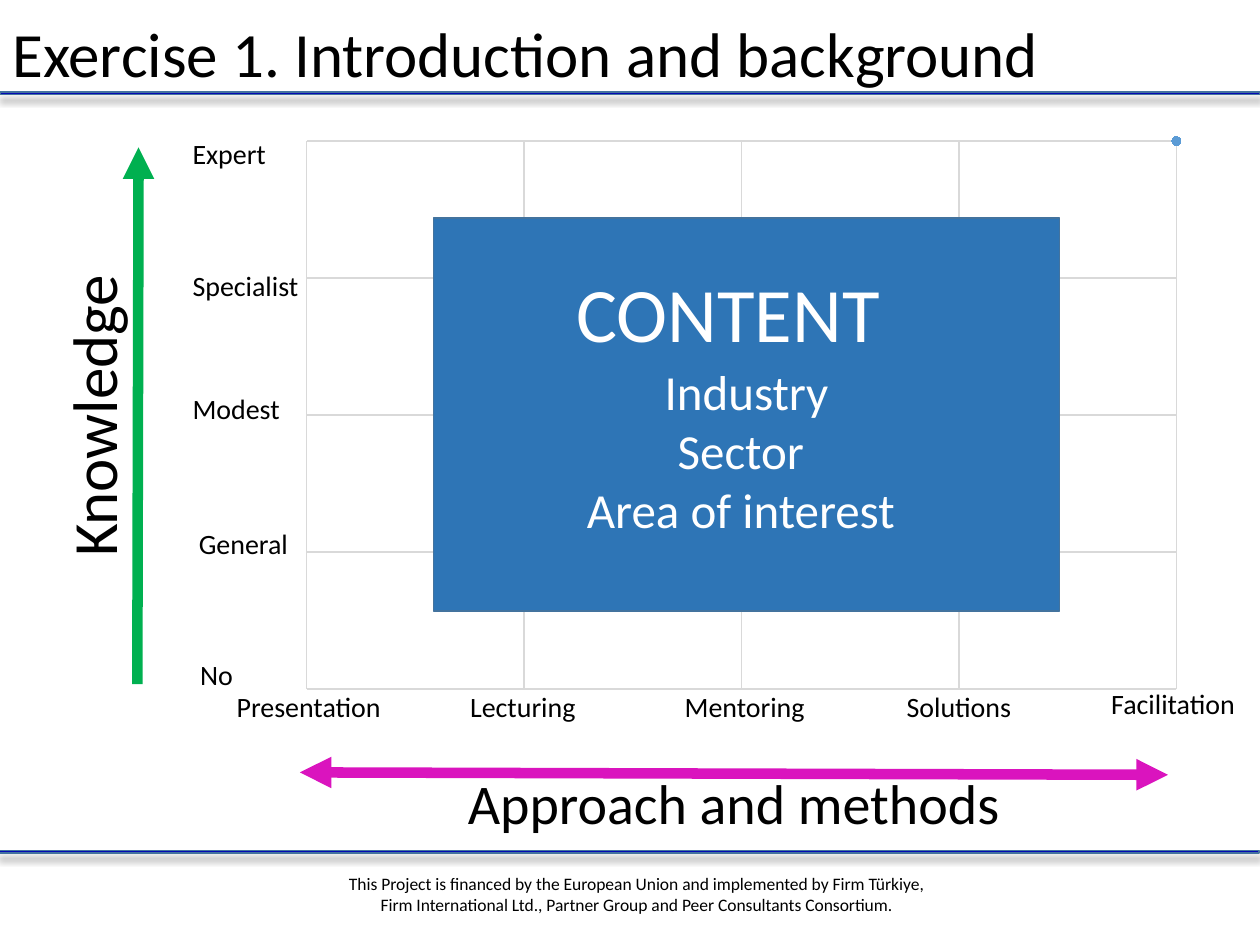
from lxml import etree
from pptx import Presentation
from pptx.chart.data import XyChartData
from pptx.dml.color import RGBColor
from pptx.enum.chart import XL_CHART_TYPE, XL_MARKER_STYLE
from pptx.enum.shapes import MSO_CONNECTOR, MSO_SHAPE
from pptx.enum.text import MSO_ANCHOR, PP_ALIGN
from pptx.oxml import parse_xml
from pptx.oxml.ns import nsdecls, qn
from pptx.util import Inches, Pt

BLACK = RGBColor(0, 0, 0)
WHITE = RGBColor(255, 255, 255)
NAVY = RGBColor(0x04, 0x08, 0xB4)
EDGE = RGBColor(0x43, 0x73, 0x9E)
BLUE = RGBColor(0x2E, 0x75, 0xB6)
DOT = RGBColor(0x5B, 0x9B, 0xD5)
GREY = RGBColor(0xD9, 0xD9, 0xD9)
GREEN = RGBColor(0x00, 0xB0, 0x50)
PINK = RGBColor(0xDA, 0x14, 0xBE)
LEFT, CENTER = PP_ALIGN.LEFT, PP_ALIGN.CENTER
TOP, BOTTOM = MSO_ANCHOR.TOP, MSO_ANCHOR.BOTTOM
RECT = MSO_SHAPE.RECTANGLE
STRAIGHT = MSO_CONNECTOR.STRAIGHT
SCATTER = XL_CHART_TYPE.XY_SCATTER
CIRCLE = XL_MARKER_STYLE.CIRCLE
FONT = "Calibri"

LEVELS = [("Expert", 0, 0), ("Specialist", 0, 1.05), ("Modest", 0, 2.03),
          ("General", 0.05, 3.1), ("No", 0.06, 4.14)]
METHODS = [("Presentation", 0, 0), ("Lecturing", 1.7, 0), ("Mentoring", 3.46, 0),
           ("Solutions", 5.16, 0), ("Facilitation", 6.86, -0.02)]
TOPICS = [("CONTENT", 44, 0.29), ("Industry", 28, 0),
          ("Sector", 28, 0.09), ("Area of interest", 28, 0.09)]


def style(font, size, color):
    font.name = FONT
    font.size = Pt(size)
    font.color.rgb = color


def label(slide, box, text, size, align=LEFT, anchor=BOTTOM, space=0.9):
    frame = slide.shapes.add_textbox(*map(Inches, box)).text_frame
    frame.word_wrap = True
    frame.vertical_anchor = anchor
    frame.text = text
    line = frame.paragraphs[0]
    line.alignment = align
    line.line_spacing = space
    style(line.runs[0].font, size, BLACK)
    return frame


def block(slide, box, fill):
    shape = slide.shapes.add_shape(RECT, *map(Inches, box))
    shape.shadow.inherit = False
    shape.fill.solid()
    shape.fill.fore_color.rgb = fill
    shape.line.color.rgb = EDGE
    shape.line.width = Pt(1)
    return shape


def rule(slide, left, top):
    shape = block(slide, (left, top, 10, 0.02), NAVY)
    effects = shape._element.spPr.find(qn("a:effectLst"))
    effects.append(parse_xml(
        f'<a:outerShdw {nsdecls("a")} blurRad="50800" dist="38100" dir="5400000" '
        'algn="t" rotWithShape="0"><a:srgbClr val="000000">'
        '<a:alpha val="40000"/></a:srgbClr></a:outerShdw>'))


def arrow(slide, start, end, color, ends):
    line = slide.shapes.add_connector(STRAIGHT, *map(Inches, start + end))
    line.line.color.rgb = color
    line.line.width = Pt(6)
    props = line._element.spPr
    for name in ends:
        etree.SubElement(props.find(qn("a:ln")), qn(f"a:{name}"), type="triangle")
    etree.SubElement(props, qn("a:effectLst"))


def grid(slide, box):
    data = XyChartData()
    series = data.add_series("Series 1")
    for step in range(1, 5):
        series.add_data_point(step, step * 25)
    chart = slide.shapes.add_chart(SCATTER, *map(Inches, box), data).chart
    chart.has_legend = False
    chart.has_title = False
    style(chart.font, 10, BLACK)
    for axis, top, unit in ((chart.category_axis, 4, 1), (chart.value_axis, 100, 25)):
        axis.minimum_scale = 0
        axis.maximum_scale = top
        axis.major_unit = unit
        axis.has_major_gridlines = True
        line = axis.major_gridlines.format.line
        line.color.rgb = GREY
        line.width = Pt(0.75)
        axis.visible = False
    plot = chart.plots[0]
    plot.vary_by_categories = False
    dots = plot.series[0]
    dots.smooth = False
    dots.format.line.fill.background()
    dots.marker.style = CIRCLE
    dots.marker.size = 5
    dots.marker.format.fill.solid()
    dots.marker.format.fill.fore_color.rgb = DOT
    dots.marker.format.line.color.rgb = DOT
    area = chart._chartSpace.chart.plotArea
    for old in area.findall(qn("c:layout")):
        area.remove(old)
    area.insert(0, parse_xml(
        f'<c:layout {nsdecls("c")}><c:manualLayout><c:layoutTarget val="inner"/>'
        '<c:xMode val="edge"/><c:yMode val="edge"/><c:x val="0.02"/><c:y val="0.02"/>'
        '<c:w val="0.96"/><c:h val="0.96"/></c:manualLayout></c:layout>'))


def levels(slide, box):
    left, top, width, height = box
    for text, right, down in LEVELS:
        label(slide, (left + right, top + down, width, height), text, 16)


def methods(slide, box):
    left, top, width, height = box
    for text, right, down in METHODS:
        label(slide, (left + right, top + down, width, height), text, 16, CENTER)


def content(slide, box):
    frame = block(slide, box, BLUE).text_frame
    frame.vertical_anchor = TOP
    frame.margin_top = Inches(0.38)
    frame.text = "\n".join(text for text, _, _ in TOPICS)
    for line, (_, size, inset) in zip(frame.paragraphs, TOPICS):
        line.alignment = CENTER
        line._p.get_or_add_pPr().set("marR", str(Inches(inset)))
        style(line.runs[0].font, size, WHITE)
    frame.paragraphs[0].space_after = Pt(2)


def knowledge(slide, box):
    left, top, width, height = box
    arrow(slide, (left + width, top + height), (left + width + 0.01, top),
          GREEN, ["tailEnd"])
    frame = label(slide, box, "Knowledge", 36, CENTER)
    frame._txBody.bodyPr.set("vert", "vert270")


def approach(slide, box):
    left, top, width, _ = box
    arrow(slide, (left, top), (left + width, top + 0.02), PINK, ["headEnd", "tailEnd"])
    label(slide, box, "Approach and methods", 32, CENTER)


def header(slide, box):
    label(slide, box, "Exercise 1. Introduction and background", 36)
    rule(slide, 0, 0.73)


def footer(slide, box):
    rule(slide, -0.01, 6.75)
    text = ("This Project is financed by the European Union and implemented by "
            "Firm Türkiye, Firm International Ltd., Partner Group and "
            "Peer Consultants Consortium.")
    label(slide, box, text, 10, CENTER, TOP, 1.0)


def main():
    deck = Presentation()
    deck.slide_width = Inches(10)
    deck.slide_height = Inches(7.5)
    slide = deck.slides.add_slide(deck.slide_layouts[6])
    footer(slide, (2.64, 6.88, 4.82, 0.44))
    header(slide, (0, 0.02, 10, 0.75))
    grid(slide, (2.29, 1.03, 7.19, 4.53))
    levels(slide, (1.43, 1.03, 1.15, 0.37))
    knowledge(slide, (0.58, 1.17, 0.51, 4.26))
    approach(slide, (2.38, 6.13, 6.89, 0.56))
    content(slide, (3.44, 1.73, 4.97, 3.12))
    methods(slide, (1.58, 5.43, 1.74, 0.36))
    deck.save("out.pptx")


if __name__ == "__main__":
    main()
